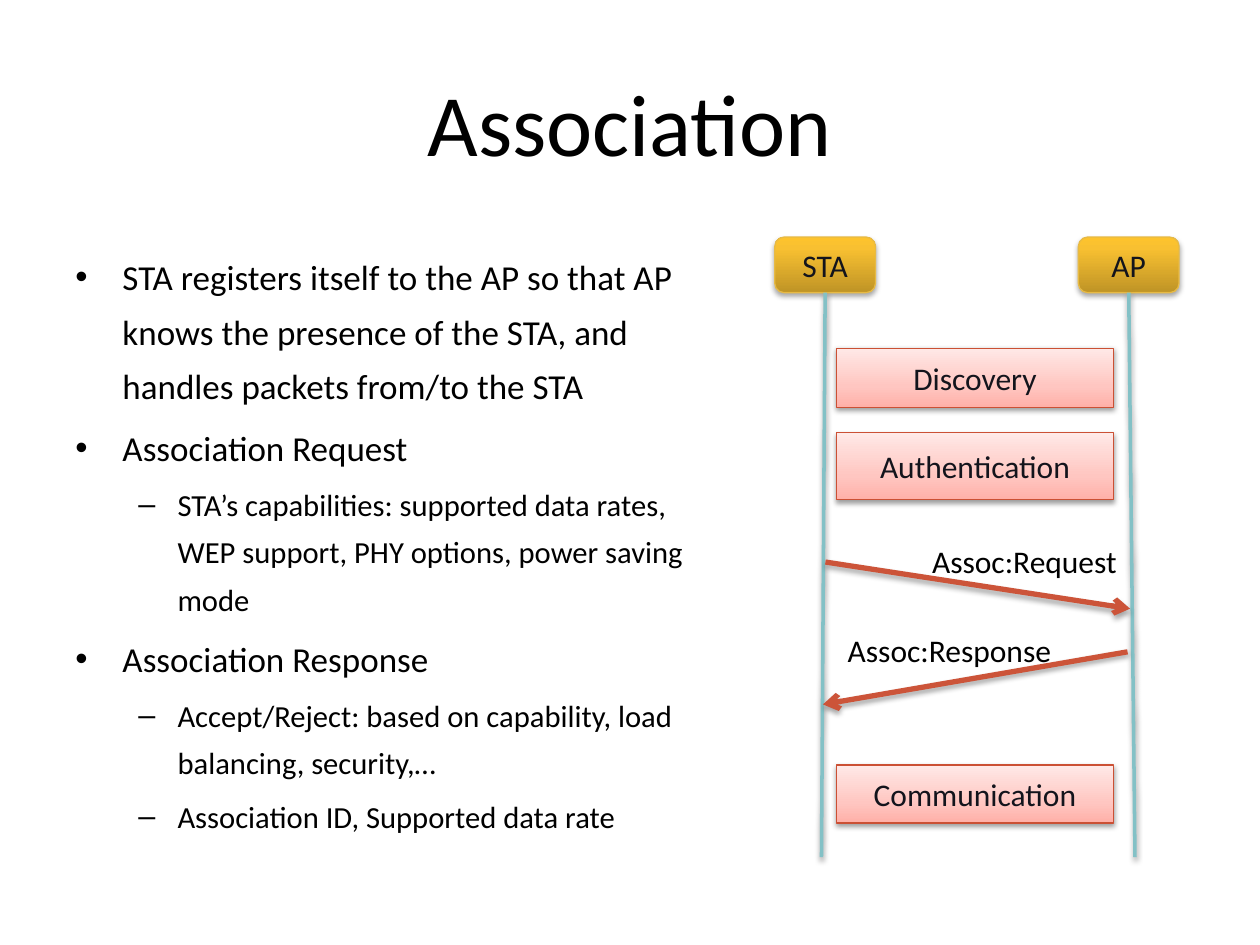
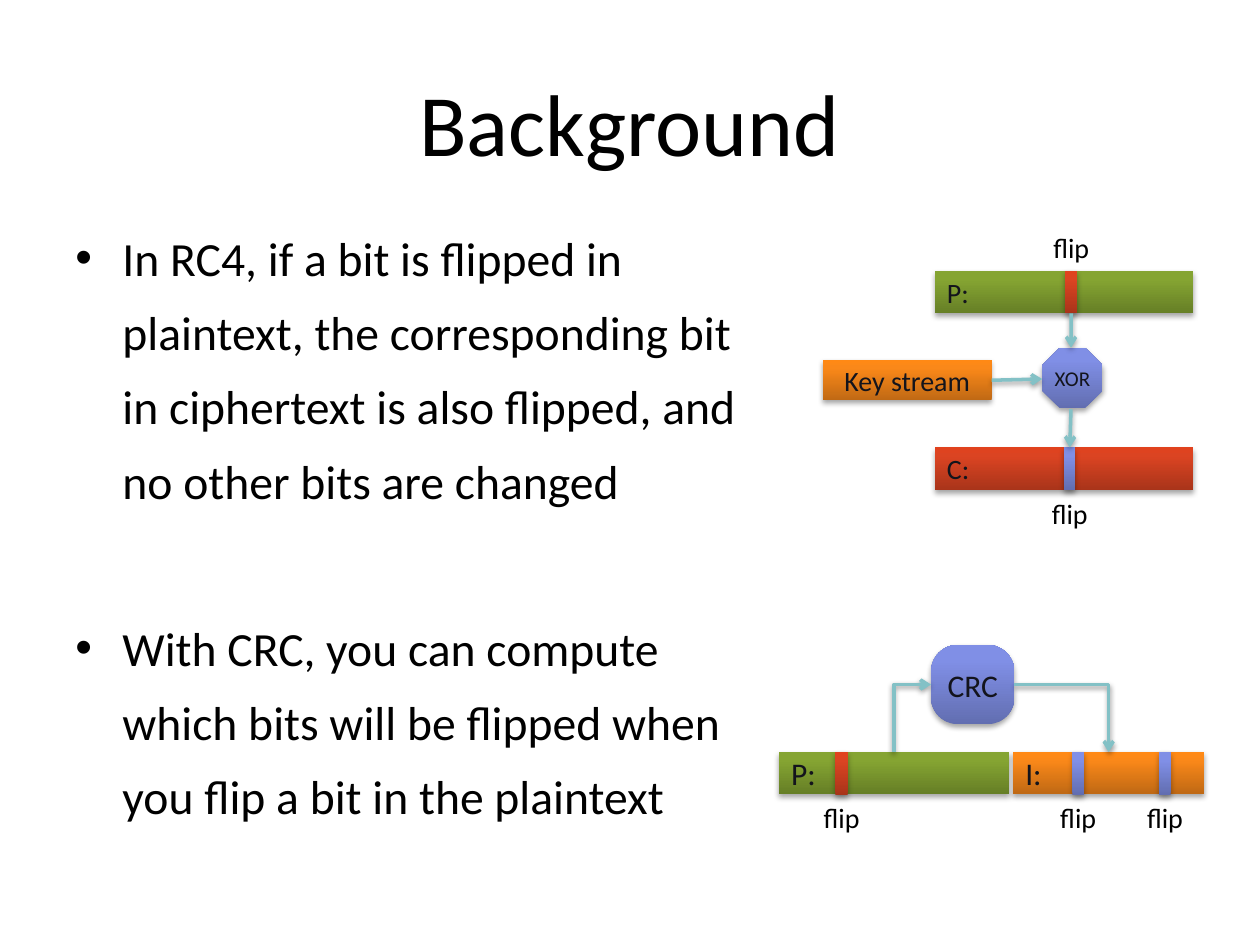
from dataclasses import dataclass

from lxml.etree import SubElement
from pptx import Presentation
from pptx.dml.color import RGBColor
from pptx.enum.shapes import MSO_CONNECTOR as LINK, MSO_SHAPE as SHAPE
from pptx.enum.text import MSO_ANCHOR as ANCHOR, MSO_AUTO_SIZE as FIT, PP_ALIGN as ALIGN
from pptx.oxml.ns import qn
from pptx.util import Cm, Pt

FONT = "Calibri"
COLORS = {
    "text": "000000", "shape_text": "13141C", "shadow": "000000",
    "link": "83C1C6", "message": "CC5439",
    "node_line": "E7BA45", "phase_line": "CB5034",
}
# Gradients run from bottom to top: (position in percent, colour)
GRADIENTS = {
    "gold": [(0, "BF9426"), (80, "F8C031"), (100, "FDC32D")],
    "pink": [(0, "FFB0A8"), (35, "FFC6C1"), (100, "FFE9E7")],
    "green": [(0, "667F26"), (80, "85A432"), (100, "87A730")],
    "red": [(0, "A9341A"), (80, "DB4422"), (100, "E0421E")],
    "orange": [(0, "C06914"), (80, "FA8819"), (100, "FF8915")],
    "blue": [(0, "626EB1"), (80, "808FE6"), (100, "7E8EE9")],
}
SOFT_SHADOW = (38, 1.6)  # opacity in percent, distance in points
DEEP_SHADOW = (35, 1.8)
BIT_HEIGHT = 0.86
# Bullet levels: sign, left margin, hanging indent
LEVELS = [("•", 0.95, 0.95), ("–", 2.06, 0.79)]


@dataclass
class Box:
    """A region in centimetres."""
    left: float
    top: float
    width: float
    height: float

    def inner(self, dx, dy, width, height):
        return Box(self.left + dx, self.top + dy, width, height)

    def point(self, dx, dy):
        return Cm(self.left + dx), Cm(self.top + dy)

    def lengths(self):
        return [Cm(v) for v in (self.left, self.top, self.width, self.height)]


def rgb(name):
    return RGBColor.from_string(COLORS[name])


# Shared text, fill and line styles
def add_span(para, text, size, color="text"):
    span = para.add_run()
    span.text = text
    span.font.name, span.font.size = FONT, Pt(size)
    span.font.color.rgb = rgb(color)


def add_shadow(properties, shadow):
    opacity, distance = shadow
    effects = properties.find(qn("a:effectLst"))
    if effects is None:
        effects = SubElement(properties, qn("a:effectLst"))
    outer = SubElement(effects, qn("a:outerShdw"), blurRad=str(Pt(3.1)),
                       dist=str(Pt(distance)), dir="5400000", rotWithShape="0")
    color = SubElement(outer, qn("a:srgbClr"), val=COLORS["shadow"])
    SubElement(color, qn("a:alpha"), val=str(opacity * 1000))


def fill_gradient(shape, name):
    shape.fill.gradient()
    shape.fill.gradient_angle = 90
    stops = shape._element.spPr.find(qn("a:gradFill")).find(qn("a:gsLst"))
    for stop in list(stops):
        stops.remove(stop)
    for position, color in GRADIENTS[name]:
        stop = SubElement(stops, qn("a:gs"), pos=str(position * 1000))
        SubElement(stop, qn("a:srgbClr"), val=color)


def add_block(page, box, gradient, text="", size=18, kind=SHAPE.RECTANGLE,
              line=None, align=ALIGN.CENTER, shadow=DEEP_SHADOW, tight=False):
    shape = page.shapes.add_shape(kind, *box.lengths())
    fill_gradient(shape, gradient)
    if line:
        shape.line.color.rgb = rgb(line)
        shape.line.width = Pt(0.75)
    else:
        shape.line.fill.background()
    shape.shadow.inherit = False
    add_shadow(shape._element.spPr, shadow)
    if text:
        frame = shape.text_frame
        frame.vertical_anchor = ANCHOR.MIDDLE
        if tight:
            frame.margin_left = frame.margin_right = 0
            frame.margin_top = frame.margin_bottom = 0
        para = frame.paragraphs[0]
        para.alignment = align
        add_span(para, text, size, "shape_text")
    return shape


def add_label(page, box, text, size, align=ALIGN.LEFT):
    frame = page.shapes.add_textbox(*box.lengths()).text_frame
    frame.word_wrap = False
    frame.auto_size = FIT.SHAPE_TO_FIT_TEXT
    frame.paragraphs[0].alignment = align
    add_span(frame.paragraphs[0], text, size)


def add_link(page, start, end, color="link", width=2, arrow="tailEnd",
             shadow=SOFT_SHADOW, bent=False):
    """Join two ends; each is a point or a (shape, side) pair."""
    kind = LINK.ELBOW if bent else LINK.STRAIGHT
    link = page.shapes.add_connector(kind, 0, 0, 0, 0)
    if isinstance(start[0], int):
        link.begin_x, link.begin_y = start
    else:
        link.begin_connect(*start)
    if isinstance(end[0], int):
        link.end_x, link.end_y = end
    else:
        link.end_connect(*end)
    link.line.color.rgb = rgb(color)
    link.line.width = Pt(width)
    properties = link._element.spPr
    if bent:
        properties.find(qn("a:prstGeom")).set("prst", "bentConnector2")
    if arrow:
        SubElement(properties.find(qn("a:ln")), qn("a:" + arrow), type="arrow")
    add_shadow(properties, shadow)


# Title and bullet list
def add_title(page, text):
    box = Box(1.27, 1.27, 22.86, 3.18)
    frame = page.shapes.add_textbox(*box.lengths()).text_frame
    frame.word_wrap = True
    frame.paragraphs[0].alignment = ALIGN.CENTER
    add_span(frame.paragraphs[0], text, 50)


def add_bullets(page, box, items, sizes, gap=None, bottom=0.13):
    """Items are (level, text); gap is the space between items in points."""
    frame = page.shapes.add_textbox(*box.lengths()).text_frame
    frame.word_wrap = True
    frame.vertical_anchor = ANCHOR.MIDDLE
    frame.margin_bottom = Cm(bottom)
    for index, (level, text) in enumerate(items):
        para = frame.add_paragraph() if index else frame.paragraphs[0]
        size = sizes[level]
        para.level = level
        para.line_spacing = 1.3
        para.space_before = Pt(gap if gap and index else 0.2 * size)
        sign, margin, hanging = LEVELS[level]
        properties = para._p.get_or_add_pPr()
        properties.set("marL", str(Cm(margin)))
        properties.set("indent", str(-Cm(hanging)))
        SubElement(properties, qn("a:buFont"), typeface="Arial")
        SubElement(properties, qn("a:buChar"), char=sign)
        add_span(para, text, size)


# Message sequence between station and access point
def draw_sequence(page, box):
    node_width, node_height = 2.03, 1.12
    nodes = [("STA", 0, 0.94), ("AP", box.width - node_width, 7.26)]
    for name, dx, foot in nodes:
        node = add_block(page, box.inner(dx, 0, node_width, node_height), "gold",
                         name, kind=SHAPE.ROUNDED_RECTANGLE, line="node_line")
        add_link(page, (node, 2), box.point(foot, box.height), arrow=None)

    messages = [
        ("Assoc:Request", (1.02, 6.55), (7.16, 7.49), (2.92, 6.02, 4.39, 1.02)),
        ("Assoc:Response", (7.11, 8.36), (0.97, 9.42), (1.22, 7.82, 4.78, 1.02)),
    ]
    for text, start, end, place in messages:
        add_link(page, box.point(*start), box.point(*end), "message", 3,
                 shadow=DEEP_SHADOW)
        add_label(page, box.inner(*place), text, 18)

    phases = [("Discovery", 2.24, 1.19), ("Authentication", 3.94, 1.35),
              ("Communication", 10.64, 1.17)]
    for text, dy, height in phases:
        add_block(page, box.inner(1.24, dy, 5.59, height), "pink", text,
                  line="phase_line", shadow=SOFT_SHADOW)


def add_flipped_bit(page, box, dx, dy, width, gradient, label_dy):
    bit = add_block(page, box.inner(dx, dy, width, BIT_HEIGHT), gradient)
    label_width = 1.24
    label_dx = dx + (width - label_width) / 2
    add_label(page, box.inner(label_dx, label_dy, label_width, 0.94), "flip", 16,
              ALIGN.CENTER)
    return bit


# Stream cipher: plaintext and key stream meet in XOR
def draw_cipher(page, box):
    for text, dy, gradient in [("P:", 0.94, "green"), ("C:", 4.5, "red")]:
        add_block(page, box.inner(2.25, dy, 5.21, BIT_HEIGHT), gradient, text, 16,
                  align=ALIGN.LEFT)
    key = add_block(page, box.inner(0, 2.74, 3.4, 0.81), "orange", "Key stream", 16)
    add_block(page, box.inner(4.42, 2.49, 1.22, 1.22), "blue", "XOR", 12,
              kind=SHAPE.OCTAGON, tight=True)
    plain_bit = add_flipped_bit(page, box, 4.88, 0.94, 0.25, "red", 0)
    cipher_bit = add_flipped_bit(page, box, 4.86, 4.5, 0.23, "blue", 5.36)
    add_link(page, (plain_bit, 2), box.point(5, 2.49))
    add_link(page, (key, 3), box.point(4.42, 3.12))
    add_link(page, box.point(5, 3.73), (cipher_bit, 0))


# Checksum: CRC of the plaintext gives the integrity value
def draw_checksum(page, box):
    bar_top, bar_height = 2.16, 0.84
    plain = add_block(page, box.inner(0, bar_top, 4.65, bar_height), "green", "P:",
                      align=ALIGN.LEFT)
    check = add_block(page, box.inner(4.72, bar_top, 3.86, bar_height), "orange", "I:",
                      align=ALIGN.LEFT)
    crc = add_block(page, box.inner(3.07, 0, 1.68, 1.6), "blue", "CRC",
                    kind=SHAPE.ROUNDED_RECTANGLE, tight=True)
    crc.adjustments[0] = 0.34
    add_link(page, (crc, 1), (plain, 0), arrow="headEnd", bent=True)
    add_link(page, (crc, 3), (check, 0), bent=True)
    for dx, width, gradient in [(1.14, 0.25, "red"), (5.92, 0.23, "blue"),
                                (7.67, 0.23, "blue")]:
        add_flipped_bit(page, box, dx, bar_top, width, gradient, 3.02)


# Slides
def build_association(page):
    add_title(page, "Association")
    add_bullets(page, Box(1.27, 4.45, 12.98, 12.83), [
        (0, "STA registers itself to the AP so that AP knows the presence of the STA, "
            "and handles packets from/to the STA"),
        (0, "Association Request"),
        (1, "STA’s capabilities: supported data rates, WEP support, PHY options, "
            "power saving mode"),
        (0, "Association Response"),
        (1, "Accept/Reject: based on capability, load balancing, security,…"),
        (1, "Association ID, Supported data rate"),
    ], sizes=(20, 17.5))
    draw_sequence(page, Box(15.62, 4.78, 8.15, 12.5))


def build_background(page):
    add_title(page, "Background")
    add_bullets(page, Box(1.27, 4.78, 14.33, 13.03), [
        (0, "In RC4, if a bit is flipped in plaintext, the corresponding bit in "
            "ciphertext is also flipped, and no other bits are changed"),
        (0, "With CRC, you can compute which bits will be flipped when you flip a bit "
            "in the plaintext"),
    ], sizes=(27.2,), gap=53, bottom=1.83)
    draw_cipher(page, Box(16.59, 4.52, 7.47, 6.3))
    draw_checksum(page, Box(15.7, 13, 8.58, 3.96))


def main():
    deck = Presentation()
    deck.slide_width, deck.slide_height = Cm(25.4), Cm(19.05)
    for build in (build_association, build_background):
        build(deck.slides.add_slide(deck.slide_layouts[6]))
    deck.save("out.pptx")


if __name__ == "__main__":
    main()
